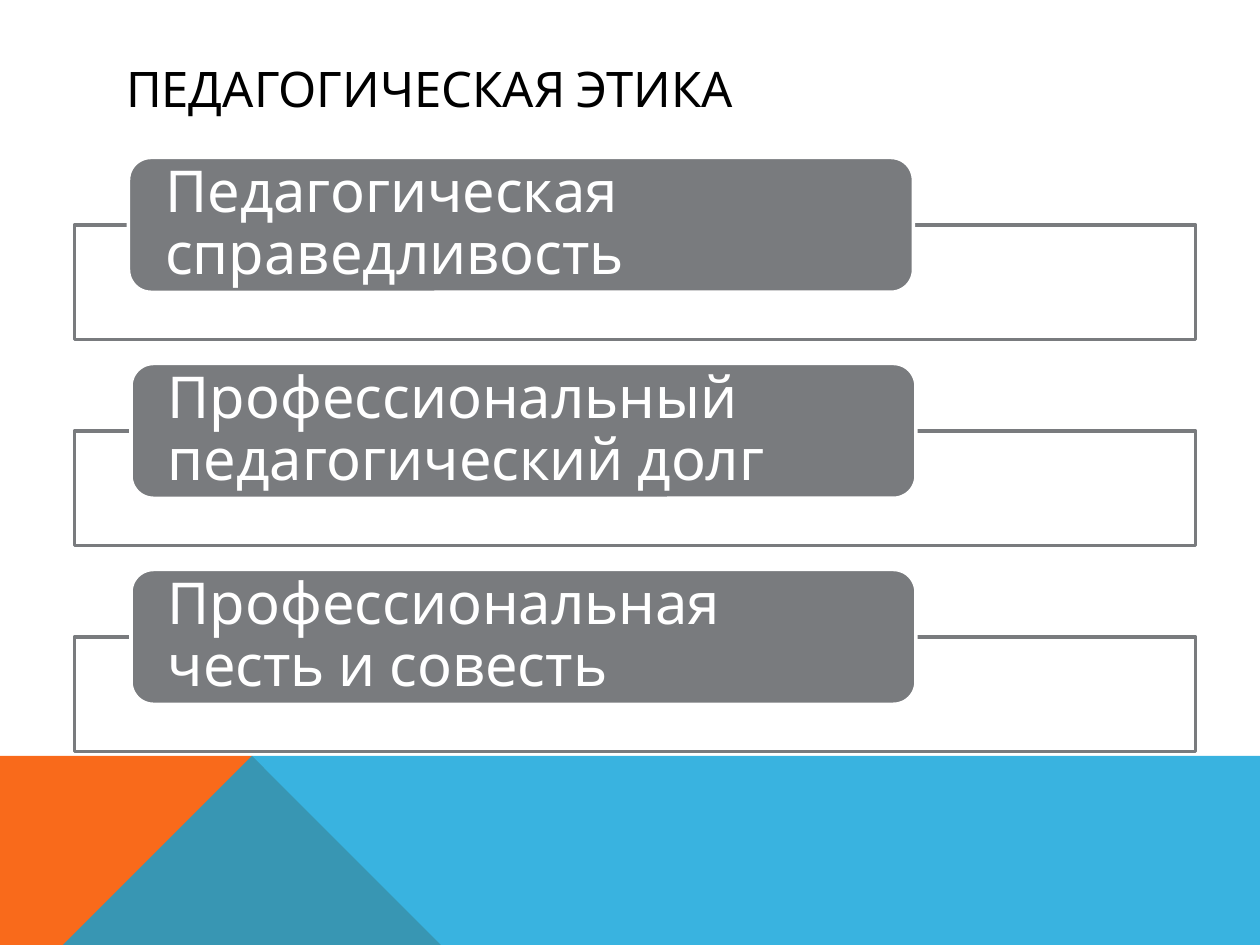
from lxml.etree import SubElement
from pptx import Presentation
from pptx.dml.color import RGBColor
from pptx.enum.shapes import MSO_SHAPE as Shape
from pptx.enum.text import MSO_ANCHOR as Anchor, PP_ALIGN as Align
from pptx.oxml.ns import qn
from pptx.util import Inches, Pt

TITLE = "ПЕДАГОГИЧЕСКАЯ ЭТИКА"
ITEMS = [
    ("Педагогическая справедливость", 1.02),
    ("Профессиональный педагогический долг", 1.04),
    ("Профессиональная честь и совесть", 1.04),
]
FONT = "Karla"
GREY, WHITE, BLACK = "797B7E", "FFFFFF", "000000"
W, H = 10, 7.5
BAND_TOP, PEAK = 5.52, 2.23
BANDS = [
    ([(0, H), (0, BAND_TOP), (PEAK, BAND_TOP), (3.91, H)], "F96A1B", 100),
    ([(0, H), (PEAK, BAND_TOP), (W, BAND_TOP), (W, H)], "08A1D9", 80),
]
FIRST_TOP, PITCH = 1.25, 1.635
LABEL_W, LABEL_H = 6.23, 1.07
BOX_LEFT, BOX_W, BOX_H = 0.59, 8.9, 0.91


def rgb(color):
    return RGBColor.from_string(color)


def paint(s, fill, line=None, alpha=100):
    s.shadow.inherit = False
    s.fill.solid()
    s.fill.fore_color.rgb = rgb(fill)
    if alpha < 100:
        clr = s.fill._xPr.find(qn("a:solidFill"))[0]
        SubElement(clr, qn("a:alpha")).set("val", str(alpha * 1000))
    if line:
        s.line.color.rgb = rgb(line)
        s.line.width = Pt(2)
    else:
        s.line.fill.background()


def write(tf, text, size, color):
    tf.text = text
    tf.word_wrap = True
    tf.vertical_anchor = Anchor.MIDDLE
    p = tf.paragraphs[0]
    p.alignment = Align.LEFT
    font = p.runs[0].font
    font.name, font.size, font.color.rgb = FONT, Pt(size), rgb(color)
    return p


def add_box(shapes, kind, *box):
    return shapes.add_shape(kind, *map(Inches, box))


def add_item(shapes, text, left, top):
    s = add_box(shapes, Shape.RECTANGLE, BOX_LEFT, top + LABEL_H / 2, BOX_W, BOX_H)
    paint(s, WHITE, GREY, 90)
    s = add_box(shapes, Shape.ROUNDED_RECTANGLE, left, top, LABEL_W, LABEL_H)
    paint(s, GREY, WHITE)
    tf = s.text_frame
    tf.margin_left = tf.margin_right = Inches(0.24)
    tf.margin_top = tf.margin_bottom = 0
    write(tf, text, 33, WHITE).line_spacing = 0.9


def main():
    prs = Presentation()
    prs.slide_width, prs.slide_height = Inches(W), Inches(H)
    slide = prs.slides.add_slide(prs.slide_layouts[5])
    shapes = slide.shapes

    for points, color, alpha in BANDS:
        fb = shapes.build_freeform(*points[0], scale=Inches(1))
        fb.add_line_segments(points[1:], close=True)
        paint(fb.convert_to_shape(), color, alpha=alpha)

    title = shapes.title
    title.left, title.top, title.width, title.height = map(Inches, (0.9, 0.4, 8.22, 0.6))
    write(title.text_frame, TITLE, 28, BLACK)

    for i, (text, left) in enumerate(ITEMS):
        add_item(shapes, text, left, FIRST_TOP + i * PITCH)

    prs.save("out.pptx")


if __name__ == "__main__":
    main()
